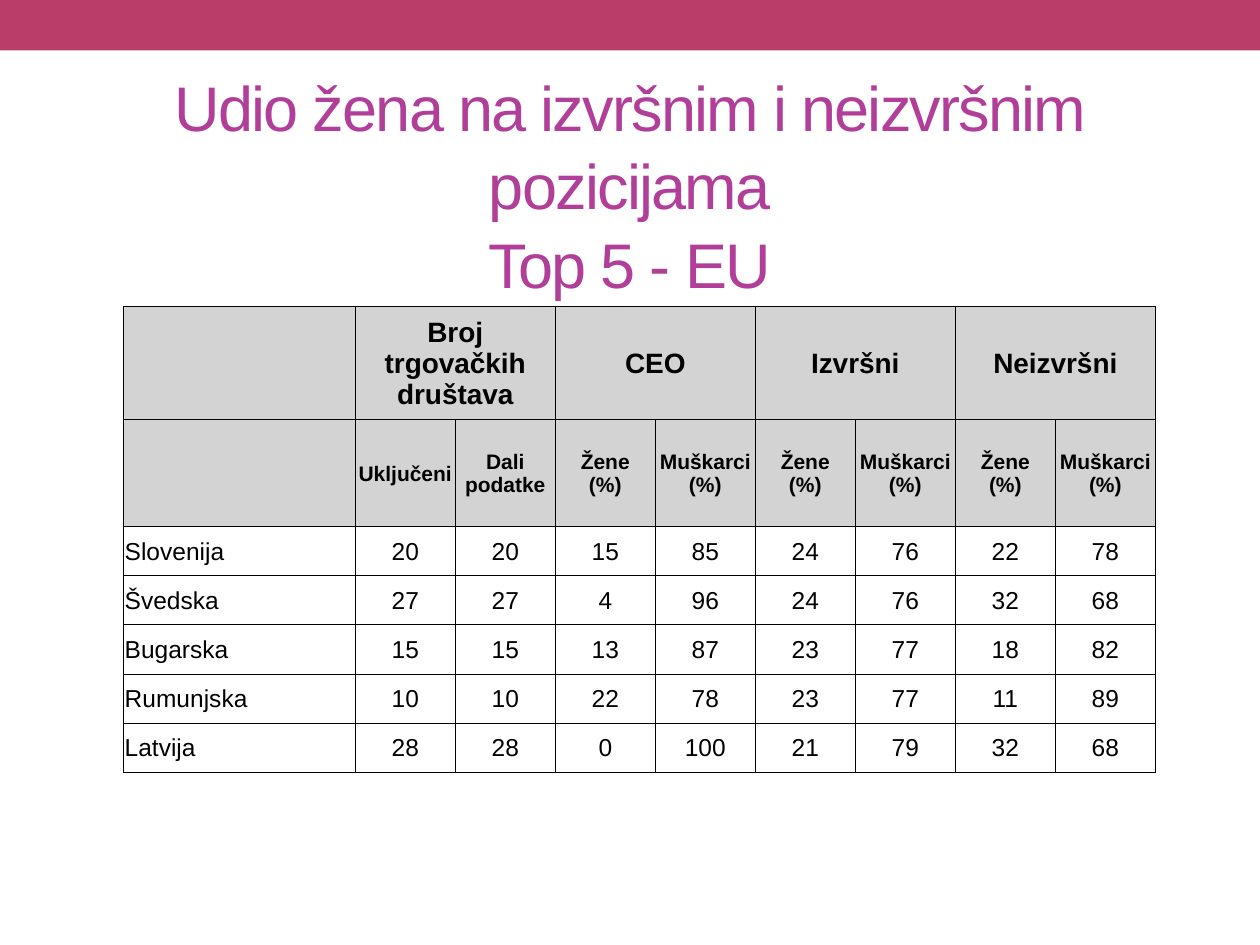
from dataclasses import dataclass

from lxml.etree import SubElement
from pptx import Presentation
from pptx.dml.color import RGBColor
from pptx.enum.shapes import MSO_SHAPE
from pptx.enum.text import MSO_ANCHOR, MSO_AUTO_SIZE, PP_ALIGN
from pptx.oxml.ns import qn
from pptx.util import Inches, Pt

# Content
TITLE = "Udio žena na izvršnim i neizvršnim pozicijama\vTop 5 - EU"
GROUPS = ["Broj trgovačkih društava", "CEO", "Izvršni", "Neizvršni"]
SUBHEADINGS = ["", "Uključeni", "Dali podatke"] + ["Žene\v(%)", "Muškarci\v(%)"] * 3
COUNTRIES = [
    ("Slovenija", 20, 20, 15, 85, 24, 76, 22, 78),
    ("Švedska", 27, 27, 4, 96, 24, 76, 32, 68),
    ("Bugarska", 15, 15, 13, 87, 23, 77, 18, 82),
    ("Rumunjska", 10, 10, 22, 78, 23, 77, 11, 89),
    ("Latvija", 28, 28, 0, 100, 21, 79, 32, 68),
]


@dataclass(frozen=True)
class Theme:
    font: str = "Arial"
    band: RGBColor = RGBColor(0xB8, 0x3D, 0x68)
    title: RGBColor = RGBColor(0xB1, 0x3F, 0x9A)
    text: RGBColor = RGBColor(0, 0, 0)
    header_fill: RGBColor = RGBColor(0xD3, 0xD3, 0xD3)
    border: str = "000000"
    border_width: float = 0.5
    title_size: int = 36
    group_size: int = 16
    subheading_size: int = 12
    body_size: int = 14


THEME = Theme()

# Layout in inches
SLIDE_WIDTH, SLIDE_HEIGHT = 10, 7.5
BAND_HEIGHT = 0.4
TITLE_BOX = (0.5, 0.58, 9, 1.75)
TABLE_LEFT, TABLE_TOP, TABLE_WIDTH = 0.98, 2.43, 8.19
COUNTRY_WIDTH = 1.84
ROW_HEIGHTS = [0.9, 0.85] + [0.39] * len(COUNTRIES)
CELL_INSET = 0.01


def style_paragraph(paragraph, size, color, bold=False, alignment=PP_ALIGN.CENTER):
    paragraph.alignment = alignment
    font = paragraph.font
    font.name, font.size, font.bold = THEME.font, Pt(size), bold
    font.color.rgb = color


def add_borders(cell):
    properties = cell._tc.get_or_add_tcPr()
    for side in ("a:lnL", "a:lnR", "a:lnT", "a:lnB"):
        line = SubElement(properties, qn(side), w=str(Pt(THEME.border_width)))
        SubElement(SubElement(line, qn("a:solidFill")), qn("a:srgbClr"), val=THEME.border)


def style_cell(cell, text, size, header, alignment):
    add_borders(cell)
    if header:
        cell.fill.solid()
        cell.fill.fore_color.rgb = THEME.header_fill
    else:
        cell.fill.background()
    cell.margin_left = cell.margin_right = cell.margin_top = Inches(CELL_INSET)
    cell.margin_bottom = 0
    cell.vertical_anchor = MSO_ANCHOR.MIDDLE
    cell.text = str(text)
    style_paragraph(cell.text_frame.paragraphs[0], size, THEME.text, header, alignment)


def add_band(slide):
    band = slide.shapes.add_shape(
        MSO_SHAPE.RECTANGLE, 0, 0, Inches(SLIDE_WIDTH), Inches(BAND_HEIGHT))
    band.shadow.inherit = False
    band.fill.solid()
    band.fill.fore_color.rgb = THEME.band
    band.line.fill.background()


def add_title(slide):
    title = slide.shapes.title
    title.left, title.top, title.width, title.height = map(Inches, TITLE_BOX)
    frame = title.text_frame
    frame.text = TITLE
    frame.auto_size = MSO_AUTO_SIZE.NONE
    frame.vertical_anchor = MSO_ANCHOR.MIDDLE
    paragraph = frame.paragraphs[0]
    style_paragraph(paragraph, THEME.title_size, THEME.title)
    paragraph.line_spacing = 1.04
    for run in paragraph.runs:
        run.font._element.set("spc", "-100")  # tighten letters by one point


def add_share_table(slide):
    # Each group heading covers two columns
    group_row = [""] + [text for group in GROUPS for text in (group, "")]
    rows = [group_row, SUBHEADINGS, *COUNTRIES]
    sizes = [THEME.group_size, THEME.subheading_size] + [THEME.body_size] * len(COUNTRIES)
    column_count = len(SUBHEADINGS)
    value_width = (TABLE_WIDTH - COUNTRY_WIDTH) / (column_count - 1)

    table = slide.shapes.add_table(
        len(rows), column_count, Inches(TABLE_LEFT), Inches(TABLE_TOP),
        Inches(TABLE_WIDTH), Inches(sum(ROW_HEIGHTS))).table
    table.first_row = table.horz_banding = False
    for index, column in enumerate(table.columns):
        column.width = Inches(value_width if index else COUNTRY_WIDTH)
    for row, height in zip(table.rows, ROW_HEIGHTS):
        row.height = Inches(height)

    for row_index, (values, size) in enumerate(zip(rows, sizes)):
        header = row_index < 2
        for column_index, value in enumerate(values):
            is_country = not header and column_index == 0
            alignment = PP_ALIGN.LEFT if is_country else PP_ALIGN.CENTER
            style_cell(table.cell(row_index, column_index), value, size, header, alignment)
    for column_index in range(1, column_count, 2):
        table.cell(0, column_index).merge(table.cell(0, column_index + 1))


def main():
    presentation = Presentation()
    presentation.slide_width = Inches(SLIDE_WIDTH)
    presentation.slide_height = Inches(SLIDE_HEIGHT)
    slide = presentation.slides.add_slide(presentation.slide_layouts[5])
    add_band(slide)
    add_title(slide)
    add_share_table(slide)
    presentation.save("out.pptx")


if __name__ == "__main__":
    main()
